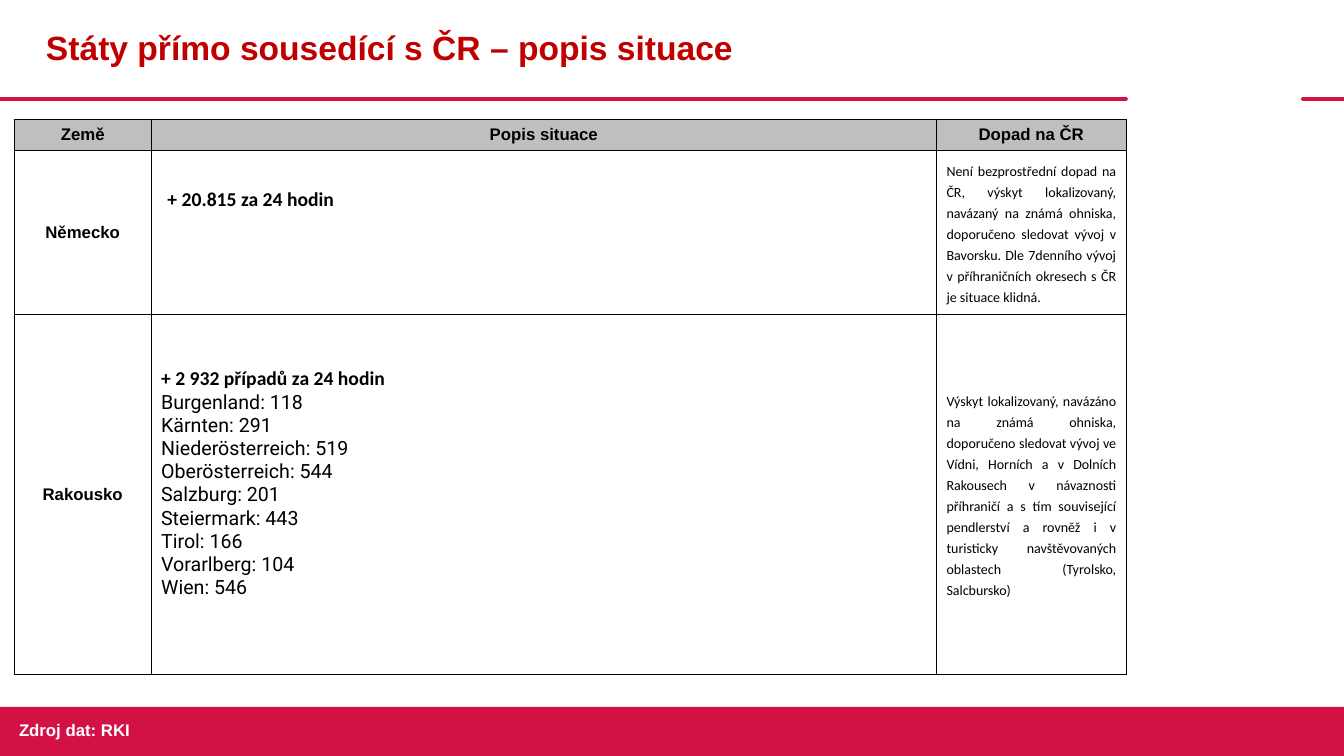
from pptx import Presentation
from pptx.dml.color import RGBColor
from pptx.enum.shapes import MSO_CONNECTOR, MSO_SHAPE
from pptx.enum.text import MSO_ANCHOR, PP_ALIGN
from pptx.oxml import parse_xml
from pptx.oxml.ns import nsdecls
from pptx.util import Cm, Pt
from lxml.etree import SubElement
from pptx.oxml.ns import qn

CRIMSON = RGBColor(0xD3, 0x11, 0x45)
DARK_RED = RGBColor(0xC0, 0x00, 0x00)
GREY = RGBColor(0xBF, 0xBF, 0xBF)
BLACK = RGBColor(0x00, 0x00, 0x00)
WHITE = RGBColor(0xFF, 0xFF, 0xFF)

TITLE = "Státy přímo sousedící s ČR – popis situace"
SOURCE = "Zdroj dat: RKI"
HEADERS = ["Země", "Popis situace", "Dopad na ČR"]
COUNTRIES = [
    {
        "name": "Německo",
        "total": "+ 20.815 za 24 hodin",
        "regions": [],
        "impact": "Není bezprostřední dopad na ČR, výskyt lokalizovaný, navázaný na známá ohniska, "
                  "doporučeno sledovat vývoj v Bavorsku. Dle 7denního vývoj v příhraničních "
                  "okresech s ČR je situace klidná.",
        "total_format": {"align": PP_ALIGN.JUSTIFY, "spacing": Pt(12), "after": Pt(6)},
        "left": 0.41,
        "bottom": 1.6,
    },
    {
        "name": "Rakousko",
        "total": "+ 2 932 případů za 24 hodin",
        "regions": [
            ("Burgenland", 118), ("Kärnten", 291), ("Niederösterreich", 519),
            ("Oberösterreich", 544), ("Salzburg", 201), ("Steiermark", 443),
            ("Tirol", 166), ("Vorarlberg", 104), ("Wien", 546),
        ],
        "impact": "Výskyt lokalizovaný, navázáno na známá ohniska, doporučeno sledovat vývoj ve "
                  "Vídni, Horních a v Dolních Rakousech v návaznosti příhraničí a s tím související "
                  "pendlerství a rovněž i v turisticky navštěvovaných oblastech (Tyrolsko, Salcbursko)",
        "total_format": {},
        "left": 0.25,
        "bottom": 0.69,
    },
]

SLIDE_WIDTH, SLIDE_HEIGHT = 33.87, 19.05
RULE_TOP = 2.49
RULES = [(0, 28.37), (32.84, SLIDE_WIDTH)]
FOOTER_TOP = 17.81
TABLE_LEFT, TABLE_TOP = 0.36, 3.02
COLUMN_WIDTHS = [3.45, 19.79, 4.78]
ROW_HEIGHTS = [0.73, 4.14, 9.07]


def write(frame, text, size=12, font="Arial", color=BLACK, bold=True,
          align=PP_ALIGN.LEFT, spacing=None, after=None, append=False):
    paragraph = frame.add_paragraph() if append else frame.paragraphs[0]
    paragraph.alignment = align
    paragraph.line_spacing = spacing
    paragraph.space_after = after
    run = paragraph.add_run()
    run.text = text
    run.font.size = Pt(size)
    run.font.name = font
    run.font.bold = bold
    run.font.color.rgb = color


def add_text_box(slide, left, top, width, height, anchor):
    frame = slide.shapes.add_textbox(Cm(left), Cm(top), Cm(width), Cm(height)).text_frame
    frame.word_wrap = True
    frame.vertical_anchor = anchor
    return frame


def add_rule(slide, start, end):
    rule = slide.shapes.add_connector(
        MSO_CONNECTOR.STRAIGHT, Cm(start), Cm(RULE_TOP), Cm(end), Cm(RULE_TOP))
    rule.line.color.rgb = CRIMSON
    rule.line.width = Pt(3)
    rule.line._get_or_add_ln().set("cap", "rnd")
    SubElement(rule._element.spPr, qn("a:effectLst"))


def style_cell(cell, is_header):
    cell.vertical_anchor = MSO_ANCHOR.MIDDLE
    if is_header:
        cell.fill.solid()
        cell.fill.fore_color.rgb = GREY
    else:
        cell.fill.background()
    properties = cell._tc.get_or_add_tcPr()
    for position, side in enumerate(("lnL", "lnR", "lnT", "lnB")):
        properties.insert(position, parse_xml(
            f'<a:{side} {nsdecls("a")} w="12700"><a:solidFill>'
            f'<a:srgbClr val="{BLACK}"/></a:solidFill></a:{side}>'))


def add_situation_table(slide):
    table = slide.shapes.add_table(
        len(ROW_HEIGHTS), len(COLUMN_WIDTHS), Cm(TABLE_LEFT), Cm(TABLE_TOP),
        Cm(sum(COLUMN_WIDTHS)), Cm(sum(ROW_HEIGHTS))).table
    table.first_row = False
    table.horz_banding = False
    for column, width in zip(table.columns, COLUMN_WIDTHS):
        column.width = Cm(width)
    for index, (row, height) in enumerate(zip(table.rows, ROW_HEIGHTS)):
        row.height = Cm(height)
        for cell in row.cells:
            style_cell(cell, index == 0)

    for column, header in enumerate(HEADERS):
        write(table.cell(0, column).text_frame, header, align=PP_ALIGN.CENTER)
    for row, country in enumerate(COUNTRIES, start=1):
        name, situation, impact = (table.cell(row, column) for column in range(3))
        write(name.text_frame, country["name"], align=PP_ALIGN.CENTER)
        situation.margin_left = Cm(country["left"])
        situation.margin_bottom = Cm(country["bottom"])
        write(situation.text_frame, country["total"], size=14, font="Calibri",
              **country["total_format"])
        for region, cases in country["regions"]:
            write(situation.text_frame, f"{region}: {cases}", size=14, font="Roboto",
                  bold=False, append=True)
        write(impact.text_frame, country["impact"], size=10, font="Calibri", bold=False,
              align=PP_ALIGN.JUSTIFY, spacing=Pt(15))


def main():
    presentation = Presentation()
    presentation.slide_width = Cm(SLIDE_WIDTH)
    presentation.slide_height = Cm(SLIDE_HEIGHT)
    slide = presentation.slides.add_slide(presentation.slide_layouts[6])

    for start, end in RULES:
        add_rule(slide, start, end)
    footer = slide.shapes.add_shape(
        MSO_SHAPE.RECTANGLE, 0, Cm(FOOTER_TOP), Cm(SLIDE_WIDTH), Cm(SLIDE_HEIGHT - FOOTER_TOP))
    footer.shadow.inherit = False
    footer.fill.solid()
    footer.fill.fore_color.rgb = CRIMSON
    footer.line.fill.background()

    title = add_text_box(slide, 0.91, 0, 27.46, RULE_TOP, MSO_ANCHOR.MIDDLE)
    write(title, TITLE, size=24, color=DARK_RED, spacing=0.9)
    add_situation_table(slide)
    source = add_text_box(slide, 0.23, 18.01, 21.49, 0.76, MSO_ANCHOR.TOP)
    write(source, SOURCE, color=WHITE)

    presentation.save("out.pptx")


if __name__ == "__main__":
    main()
